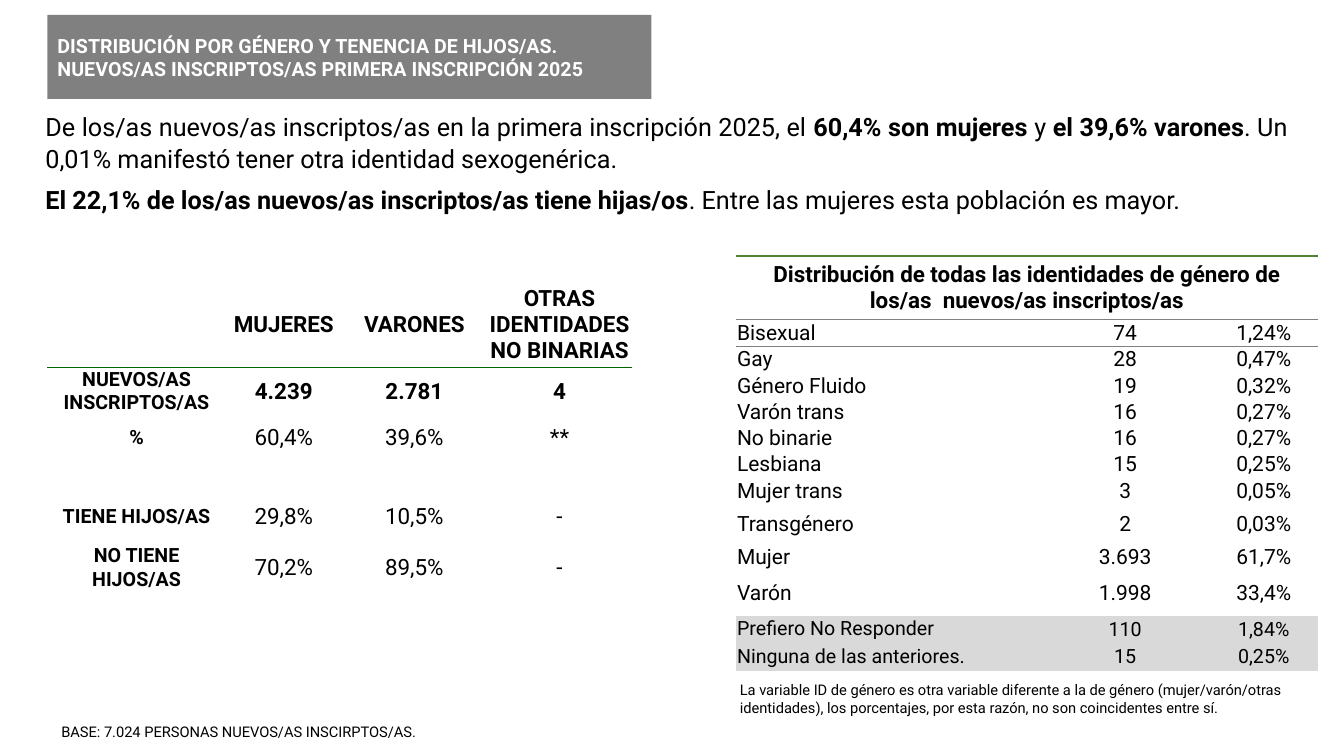
from lxml.etree import SubElement
from pptx import Presentation
from pptx.dml.color import RGBColor
from pptx.enum.text import MSO_ANCHOR, MSO_AUTO_SIZE, PP_ALIGN
from pptx.oxml import parse_xml
from pptx.oxml.ns import nsdecls, qn
from pptx.util import Inches, Pt

BLACK = RGBColor(0x00, 0x00, 0x00)
WHITE = RGBColor(0xFF, 0xFF, 0xFF)
GRAY = RGBColor(0x80, 0x80, 0x80)
LIGHT_GRAY = RGBColor(0xD9, 0xD9, 0xD9)
DARK_GREEN = RGBColor(0x00, 0x66, 0x00)
GREEN = RGBColor(0x54, 0x82, 0x35)
NO_TABLE_STYLE = "{2D5ABB26-0587-4C30-8999-92F81FD0307C}"


def add_text(paragraph, text, size, bold=False, color=BLACK):
    run = paragraph.add_run()
    run.text = text
    run.font.name = "Roboto"
    run.font.size = Pt(size)
    run.font.bold = bold
    run.font.color.rgb = color


def add_border(cell, side, color):
    cell._tc.get_or_add_tcPr().insert(0, parse_xml(
        f'<a:{side} {nsdecls("a")} w="12700"><a:solidFill>'
        f'<a:srgbClr val="{color}"/></a:solidFill></a:{side}>'))


prs = Presentation()
prs.slide_width = Inches(13.33)
prs.slide_height = Inches(7.5)
slide = prs.slides.add_slide(prs.slide_layouts[1])

heading = slide.shapes.title
heading.left, heading.top = Inches(0.47), Inches(0.28)
heading.width, heading.height = Inches(5.99), Inches(0.57)
heading.fill.solid()
heading.fill.fore_color.rgb = GRAY
heading.text_frame.auto_size = MSO_AUTO_SIZE.SHAPE_TO_FIT_TEXT
heading_line = heading.text_frame.paragraphs[0]
heading_line.alignment = PP_ALIGN.LEFT
add_text(heading_line, "DISTRIBUCIÓN POR GÉNERO Y TENENCIA DE HIJOS/AS. "
         "NUEVOS/AS INSCRIPTOS/AS PRIMERA INSCRIPCIÓN 2025", 14, True, WHITE)

findings = slide.placeholders[1]
findings.left, findings.top = Inches(0.35), Inches(1.03)
findings.width, findings.height = Inches(12.52), Inches(1.09)
findings.text_frame.auto_size = MSO_AUTO_SIZE.SHAPE_TO_FIT_TEXT
finding_texts = [
    [("De los/as nuevos/as inscriptos/as en la primera inscripción 2025, el ", False),
     ("60,4% son mujeres ", True),
     ("y ", False),
     ("el 39,6% varones", True),
     (". Un 0,01% manifestó tener otra identidad sexogenérica.", False)],
    [("El 22,1% de los/as nuevos/as inscriptos/as tiene hijas/os", True),
     (". Entre las mujeres esta población es mayor.", False)],
]
for index, parts in enumerate(finding_texts):
    finding = (findings.text_frame.add_paragraph() if index
               else findings.text_frame.paragraphs[0])
    finding.alignment = PP_ALIGN.JUSTIFY
    finding.line_spacing = 1.07
    finding.space_before = Pt(0)
    finding.space_after = Pt(6)
    properties = finding._p.get_or_add_pPr()
    properties.set("marL", "0")
    properties.set("indent", "0")
    SubElement(properties, qn("a:buNone"))
    for text, bold in parts:
        add_text(finding, text, 18, bold)

children_rows = [
    ["", "MUJERES", "VARONES", "OTRAS IDENTIDADES NO BINARIAS"],
    ["NUEVOS/AS INSCRIPTOS/AS", "4.239", "2.781", "4"],
    ["%", "60,4%", "39,6%", "**"],
    ["", "", "", ""],
    ["TIENE HIJOS/AS", "29,8%", "10,5%", "-"],
    ["NO TIENE HIJOS/AS", "70,2%", "89,5%", "-"],
]
identity_rows = [
    ["Distribución de todas las identidades de género de los/as  nuevos/as inscriptos/as", "", ""],
    ["Bisexual", "74", "1,24%"],
    ["Gay", "28", "0,47%"],
    ["Género Fluido", "19", "0,32%"],
    ["Varón trans", "16", "0,27%"],
    ["No binarie", "16", "0,27%"],
    ["Lesbiana", "15", "0,25%"],
    ["Mujer trans", "3", "0,05%"],
    ["Transgénero", "2", "0,03%"],
    ["Mujer", "3.693", "61,7%"],
    ["Varón", "1.998", "33,4%"],
    ["Prefiero No Responder", "110", "1,84%"],
    ["Ninguna de las anteriores.", "15", "0,25%"],
]
tables = [
    (children_rows, 0.47, 2.78, [1.77, 1.15, 1.44, 1.44],
     [0.87, 0.45, 0.45, 0.29, 0.51, 0.51]),
    (identity_rows, 7.3, 2.54, [3.02, 1.68, 1.07],
     [0.58] + [0.25] * 7 + [0.4, 0.25, 0.46, 0.22, 0.3]),
]
for rows, left, top, widths, heights in tables:
    by_identity = rows is identity_rows
    table = slide.shapes.add_table(
        len(rows), len(widths), Inches(left), Inches(top),
        Inches(sum(widths)), Inches(sum(heights))).table
    table.first_row = False
    table.horz_banding = False
    table._tbl.tblPr.find(qn("a:tableStyleId")).text = NO_TABLE_STYLE
    for column, width in zip(table.columns, widths):
        column.width = Inches(width)
    for row, height in zip(table.rows, heights):
        row.height = Inches(height)
    if by_identity:
        table.cell(0, 0).merge(table.cell(0, 2))

    for r, values in enumerate(rows):
        for c, value in enumerate(values):
            cell = table.cell(r, c)
            cell.vertical_anchor = MSO_ANCHOR.MIDDLE
            if by_identity and r >= 11:
                cell.fill.solid()
                cell.fill.fore_color.rgb = LIGHT_GRAY
            else:
                cell.fill.background()

            if by_identity:
                size, bold = (16 if r == 0 else 14 if r >= 11 else 15), r == 0
                if r == 11 and c > 0:
                    cell.vertical_anchor = MSO_ANCHOR.BOTTOM
                if r < 2:
                    add_border(cell, "lnB", GRAY)
                if r == 0:
                    add_border(cell, "lnT", GREEN)
            else:
                size, bold = (14 if c == 0 else 16), r < 2 or c == 0
                if r == 0:
                    add_border(cell, "lnB", DARK_GREEN)

            if not (by_identity and r == 0):
                roomy = not by_identity and r > 0
                cell.margin_left = cell.margin_right = Inches(0.03 if roomy else 0.01)
                cell.margin_top = Inches(0 if roomy else 0.01)
                cell.margin_bottom = 0
            if value:
                entry = cell.text_frame.paragraphs[0]
                is_name = by_identity and r > 0 and c == 0
                entry.alignment = PP_ALIGN.LEFT if is_name else PP_ALIGN.CENTER
                add_text(entry, value, size, bold)

footnotes = [
    (7.24, 6.71, 5.83, 0.45,
     "La variable ID de género es otra variable diferente a la de género "
     "(mujer/varón/otras identidades), los porcentajes, por esta razón, "
     "no son coincidentes entre sí."),
    (0.51, 7.12, 7.17, 0.28, "BASE: 7.024 PERSONAS NUEVOS/AS INSCIRPTOS/AS."),
]
for left, top, width, height, text in footnotes:
    footnote = slide.shapes.add_textbox(
        Inches(left), Inches(top), Inches(width), Inches(height)).text_frame
    footnote.word_wrap = True
    footnote.auto_size = MSO_AUTO_SIZE.SHAPE_TO_FIT_TEXT
    add_text(footnote.paragraphs[0], text, 10.5)

prs.save("out.pptx")
